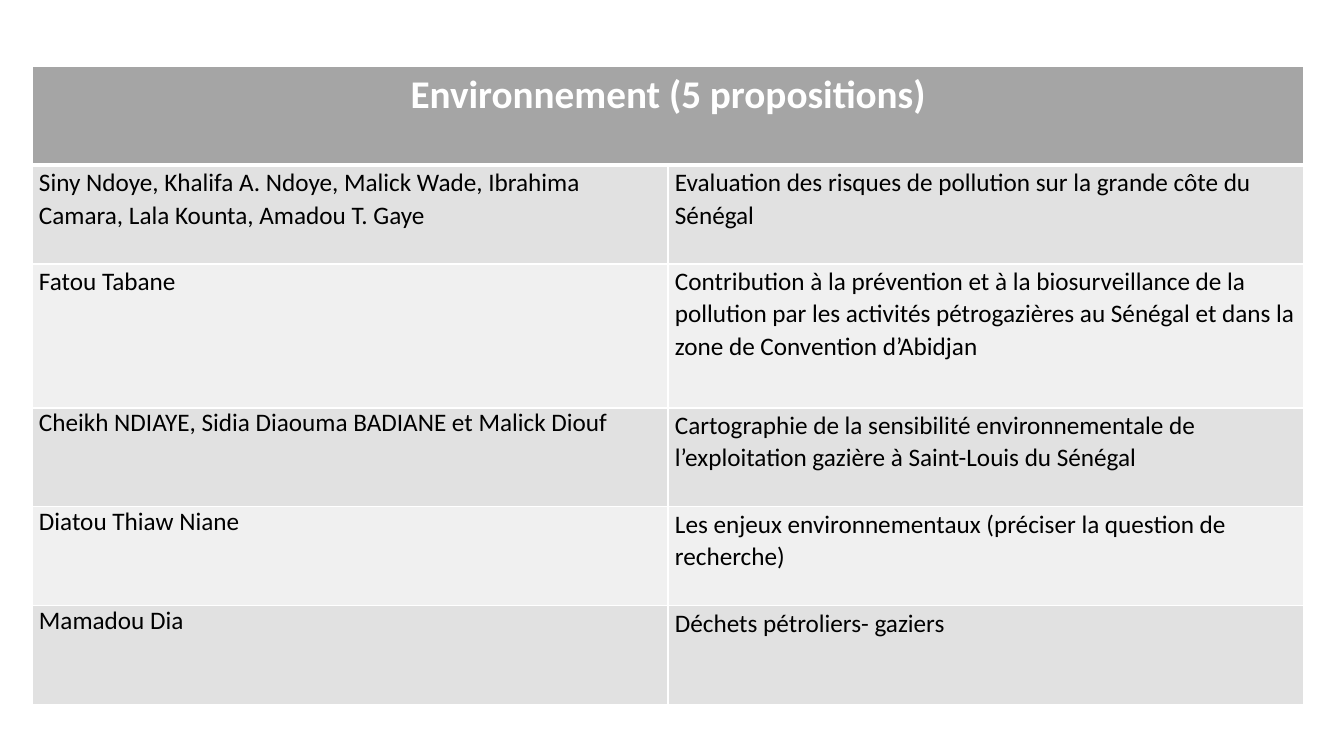
"""Build a slide with a table of proposals on the environment."""
from dataclasses import dataclass

from lxml import etree
from pptx import Presentation
from pptx.dml.color import RGBColor
from pptx.enum.text import MSO_ANCHOR, PP_ALIGN
from pptx.oxml.ns import qn
from pptx.table import Table, _Cell
from pptx.util import Emu, Pt

LEFT, CENTER = PP_ALIGN.LEFT, PP_ALIGN.CENTER
TOP = MSO_ANCHOR.TOP
EMU_PER_PX = 914400 / 100.8


@dataclass(frozen=True)
class Theme:
    font: str = "Calibri"
    header_size: int = 28
    body_size: int = 18
    white: str = "FFFFFF"
    black: str = "000000"
    header_fill: str = "A5A5A5"
    bands: tuple[str, str] = ("E1E1E1", "F0F0F0")
    thin_border: int = 1
    thick_border: int = 3


@dataclass(frozen=True)
class CellStyle:
    fill: str
    color: str
    size: int
    bold: bool = False
    alignment: PP_ALIGN = LEFT
    margin_x: int = 7
    margin_y: int = 0
    line_spacing: float = 1.0
    space_after: int = 0
    border_top: int = 1
    border_bottom: int = 1


@dataclass(frozen=True)
class Proposal:
    authors: str
    title: str
    height: int = 99
    spaced_authors: bool = True


THEME = Theme()
SLIDE_WIDTH, SLIDE_HEIGHT = 1344, 756
TABLE_LEFT, TABLE_TOP = 32, 66
COLUMN_WIDTH, HEADER_HEIGHT = 636, 99
HEADER = "Environnement (5 propositions)"
PROPOSALS = (
    Proposal(
        "Siny Ndoye, Khalifa A. Ndoye, Malick Wade, Ibrahima Camara, Lala Kounta, Amadou T. Gaye",
        "Evaluation des risques de pollution sur la grande côte du Sénégal",
    ),
    Proposal(
        "Fatou Tabane",
        "Contribution à la prévention et à la biosurveillance de la pollution par les activités "
        "pétrogazières au Sénégal et dans la zone de Convention d’Abidjan",
        height=144,
    ),
    Proposal(
        "Cheikh NDIAYE, Sidia Diaouma BADIANE et Malick Diouf",
        "Cartographie de la sensibilité environnementale de l’exploitation gazière "
        "à Saint-Louis du Sénégal",
        spaced_authors=False,
    ),
    Proposal(
        "Diatou Thiaw Niane",
        "Les enjeux environnementaux (préciser la question de recherche)",
        spaced_authors=False,
    ),
    Proposal("Mamadou Dia", "Déchets pétroliers- gaziers", spaced_authors=False),
)


def px(length: int) -> Emu:
    """Turn pixels into EMU."""
    return Emu(round(length * EMU_PER_PX))


def set_borders(cell: _Cell, style: CellStyle) -> None:
    """Draw white borders on the four sides of a cell."""
    properties = cell._tc.get_or_add_tcPr()
    widths = {
        "a:lnL": THEME.thin_border,
        "a:lnR": THEME.thin_border,
        "a:lnT": style.border_top,
        "a:lnB": style.border_bottom,
    }
    for position, (tag, width) in enumerate(widths.items()):
        line = etree.Element(qn(tag), w=str(Pt(width)))
        fill = etree.SubElement(line, qn("a:solidFill"))
        etree.SubElement(fill, qn("a:srgbClr"), val=THEME.white)
        properties.insert(position, line)


def style_cell(cell: _Cell, style: CellStyle) -> None:
    """Set the fill, margins and borders of a cell."""
    cell.fill.solid()
    cell.fill.fore_color.rgb = RGBColor.from_string(style.fill)
    cell.margin_left = cell.margin_right = px(style.margin_x)
    cell.margin_top = cell.margin_bottom = px(style.margin_y)
    cell.vertical_anchor = TOP
    set_borders(cell, style)


def write_cell(cell: _Cell, text: str, style: CellStyle) -> None:
    """Style a cell and write its single paragraph."""
    style_cell(cell, style)
    cell.text = text
    paragraph = cell.text_frame.paragraphs[0]
    paragraph.alignment = style.alignment
    paragraph.line_spacing = style.line_spacing
    paragraph.space_after = Pt(style.space_after)
    font = paragraph.font
    font.name, font.size, font.bold = THEME.font, Pt(style.size), style.bold
    font.color.rgb = RGBColor.from_string(style.color)


def write_header(table: Table) -> None:
    """Fill the merged header row."""
    style = CellStyle(
        THEME.header_fill, THEME.white, THEME.header_size, bold=True, alignment=CENTER,
        margin_x=10, margin_y=5, border_bottom=THEME.thick_border,
    )
    header, covered = table.cell(0, 0), table.cell(0, 1)
    header.merge(covered)
    write_cell(header, HEADER, style)
    style_cell(covered, style)


def write_proposal(table: Table, row: int, proposal: Proposal) -> None:
    """Fill one row with the authors and title of a proposal."""
    fill = THEME.bands[(row - 1) % 2]
    border_top = THEME.thick_border if row == 1 else THEME.thin_border
    spaced = CellStyle(
        fill, THEME.black, THEME.body_size, line_spacing=1.07, border_top=border_top
    )
    single = CellStyle(
        fill, THEME.black, THEME.body_size, space_after=8, border_top=border_top
    )
    write_cell(table.cell(row, 0), proposal.authors, spaced if proposal.spaced_authors else single)
    write_cell(table.cell(row, 1), proposal.title, spaced)


def main() -> None:
    """Build and save the presentation."""
    presentation = Presentation()
    presentation.slide_width, presentation.slide_height = px(SLIDE_WIDTH), px(SLIDE_HEIGHT)
    slide = presentation.slides.add_slide(presentation.slide_layouts[6])
    heights = [HEADER_HEIGHT, *(proposal.height for proposal in PROPOSALS)]
    table = slide.shapes.add_table(
        len(heights), 2, px(TABLE_LEFT), px(TABLE_TOP), px(2 * COLUMN_WIDTH), px(sum(heights))
    ).table
    table.horz_banding = False
    for column in table.columns:
        column.width = px(COLUMN_WIDTH)
    for row, height in zip(table.rows, heights):
        row.height = px(height)
    write_header(table)
    for index, proposal in enumerate(PROPOSALS, start=1):
        write_proposal(table, index, proposal)
    presentation.save("out.pptx")


if __name__ == "__main__":
    main()
